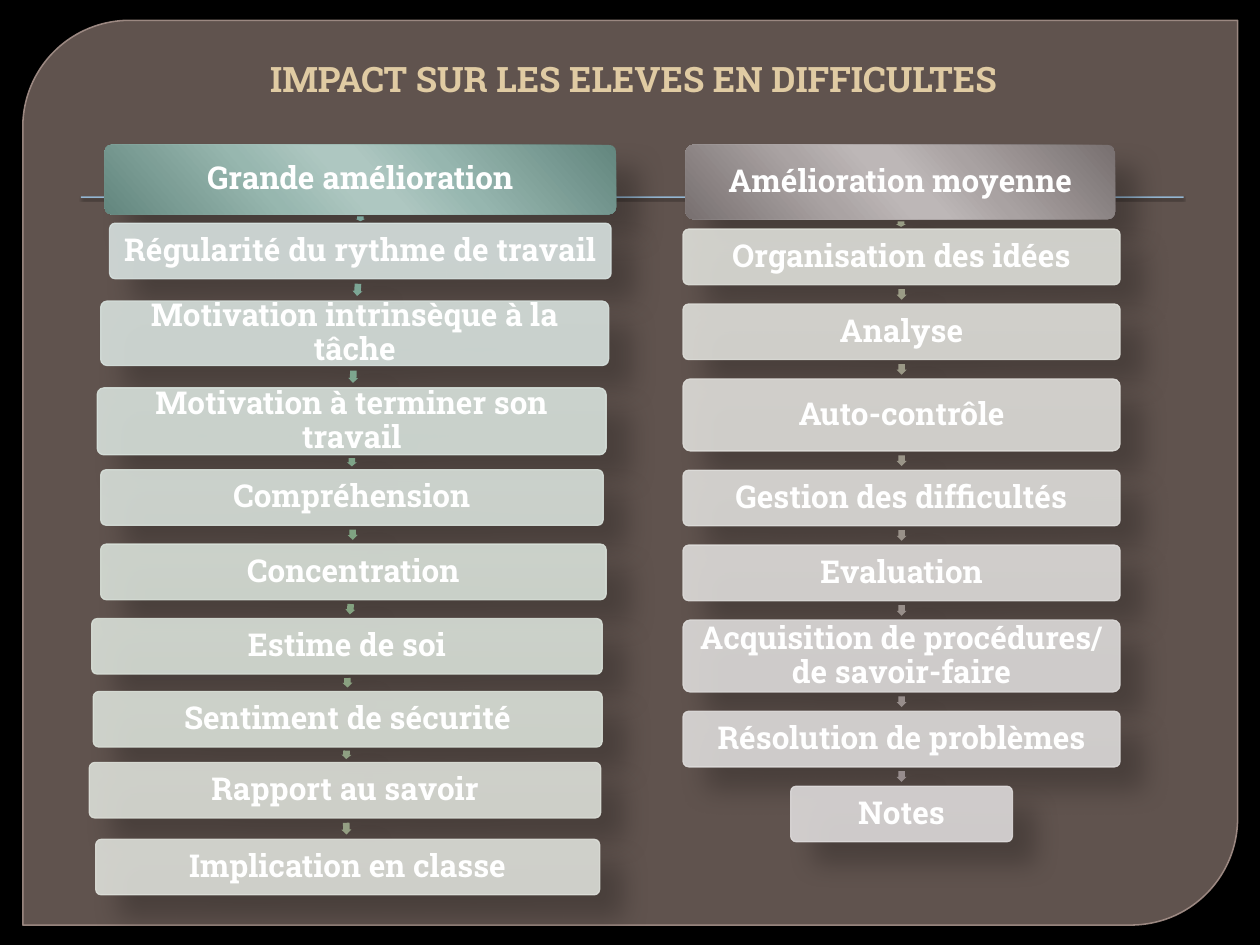
import math
from dataclasses import dataclass

from lxml import etree
from pptx import Presentation
from pptx import util as u
from pptx.dml.color import RGBColor
from pptx.enum import shapes, text
from pptx.oxml import ns

Cm = u.Cm


@dataclass(frozen=True)
class Theme:
    font: str = "Roboto Slab"
    title_size: int = 20
    label_size: int = 18
    background: str = "000000"
    panel: str = "948079"
    panel_line: str = "A9948D"
    rule: str = "94B6D2"
    title: str = "E0CBA3"
    label: str = "FFFFFF"
    shadow: str = "000000"
    green_header: tuple = ("63867E", "96B6AF", "AEC7C1", "AEC7C1", "97B7AF", "63867E")
    grey_header: tuple = ("787070", "A9A2A2", "BDB7B7", "BDB7B7", "AAA3A3", "787070")
    header_stops: tuple = (0, 33, 47, 53, 68, 100)
    green_boxes: tuple = ("D7E1DF", "D7E1DD", "D7E1DB", "D8E0DA", "D8E0D8",
                          "D9E0D8", "DAE0D8", "DCDFD8", "DDDFD9")
    grey_boxes: tuple = ("DEDFD9", "DEDED9", "DEDDD9", "DEDDDA", "DEDCDA",
                         "DDDBDA", "DDDBDA", "DDDADA")
    green_arrows: tuple = ("7BA79D", "7CA695", "7DA58E", "7EA488", "7FA382",
                           "83A280", "8AA181", "8FA082", "949F83")
    grey_arrows: tuple = ("989D85", "9B9C86", "9B9987", "9A9588", "999189",
                          "988F8A", "978D8B", "968C8C")


THEME = Theme()


def add_child(parent, tag, **attributes):
    values = {name: str(value) for name, value in attributes.items()}
    return etree.SubElement(parent, ns.qn(tag), values)


def set_fill(fill, color, opacity=100):
    fill.solid()
    fill.fore_color.rgb = RGBColor.from_string(color)
    if opacity < 100:
        element = fill.fore_color._xFill.find(ns.qn("a:srgbClr"))
        add_child(element, "a:alpha", val=opacity * 1000)


def set_line(shape, color, width, opacity):
    shape.line.width = u.Pt(width)
    set_fill(shape.line.fill, color, opacity)


def set_gradient(shape, colors):
    shape.fill.background()
    properties = shape.element.spPr
    gradient = etree.Element(ns.qn("a:gradFill"), rotWithShape="1")
    stops = add_child(gradient, "a:gsLst")
    for position, color in zip(THEME.header_stops, colors):
        stop = add_child(stops, "a:gs", pos=position * 1000)
        add_child(stop, "a:srgbClr", val=color)
    add_child(gradient, "a:lin", ang=139 * 60000, scaled=0)
    properties.replace(properties.find(ns.qn("a:noFill")), gradient)


def set_shadow(shape, opacity=26, blur=15, distance=18, angle=45):
    effects = shape.element.spPr.find(ns.qn("a:effectLst"))
    shadow = add_child(effects, "a:outerShdw", blurRad=u.Pt(blur), dist=u.Pt(distance),
                       dir=angle * 60000, algn="tl", rotWithShape=0)
    color = add_child(shadow, "a:srgbClr", val=THEME.shadow)
    add_child(color, "a:alpha", val=opacity * 1000)


def add_plain_shape(container, kind, box, *adjustments):
    shape = container.add_shape(kind, *(Cm(length) for length in box))
    shape.shadow.inherit = False
    shape.line.fill.background()
    for index, value in enumerate(adjustments):
        shape.adjustments[index] = value
    return shape


def format_runs(paragraph, size, color):
    paragraph.alignment = text.PP_ALIGN.CENTER
    for run in paragraph.runs:
        run.font.name = THEME.font
        run.font.size = u.Pt(size)
        run.font.bold = True
        run.font.color.rgb = RGBColor.from_string(color)


def add_label_box(container, box, label):
    shape = add_plain_shape(container, shapes.MSO_SHAPE.ROUNDED_RECTANGLE, box, 0.1)
    frame = shape.text_frame
    frame.text = label
    frame.word_wrap = True
    frame.vertical_anchor = text.MSO_ANCHOR.MIDDLE
    frame.margin_left = frame.margin_right = Cm(0.08)
    frame.margin_top = frame.margin_bottom = Cm(0.08)
    paragraph = frame.paragraphs[0]
    paragraph.line_spacing = 0.9
    format_runs(paragraph, THEME.label_size, THEME.label)
    return shape


def add_arrow(container, upper, lower, color):
    upper_x, lower_x = upper[0] + upper[2] / 2, lower[0] + lower[2] / 2
    bottom = upper[1] + upper[3]
    length, thickness = 0.55 * (lower[1] - bottom), 0.2
    center_x, center_y = (upper_x + lower_x) / 2, (bottom + lower[1]) / 2
    rise = lower[1] + lower[3] / 2 - upper[1] - upper[3] / 2
    box = (center_x - length / 2, center_y - thickness / 2, length, thickness)
    arrow = add_plain_shape(container, shapes.MSO_SHAPE.RIGHT_ARROW, box, 0.667, 0.5)
    arrow.rotation = math.degrees(math.atan2(rise, lower_x - upper_x))
    set_fill(arrow.fill, color)
    set_shadow(arrow)


def add_column(slide, origin, items, header_colors, box_colors, arrow_colors):
    container = slide.shapes.add_group_shape().shapes
    left, top = origin
    boxes = [(left + x, top + y, width, height) for _, x, y, width, height in items]
    header = add_label_box(container, boxes[0], items[0][0])
    set_gradient(header, header_colors)
    set_shadow(header)
    for index, (box_color, arrow_color) in enumerate(zip(box_colors, arrow_colors), 1):
        add_arrow(container, boxes[index - 1], boxes[index], arrow_color)
        shape = add_label_box(container, boxes[index], items[index][0])
        set_fill(shape.fill, box_color, 90)
        set_line(shape, box_color, 0.75, 90)
        set_shadow(shape)


def add_backdrop(slide, box):
    left, top, width, _ = box
    set_fill(slide.background.fill, THEME.background)
    panel = add_plain_shape(slide.shapes, shapes.MSO_SHAPE.ROUND_2_DIAG_RECTANGLE,
                            box, 0.118, 0)
    set_fill(panel.fill, THEME.panel, 65)
    set_line(panel, THEME.panel_line, 0.87, 88)
    rule = add_plain_shape(slide.shapes, shapes.MSO_SHAPE.RECTANGLE,
                           (left + 1.17, top + 3.55, width - 2.26, 0.03))
    set_fill(rule.fill, THEME.rule)
    set_shadow(rule, opacity=75, blur=1, distance=1, angle=90)
    for shape in (panel, rule):
        slide.shapes.title.element.addprevious(shape.element)


def add_title(slide, box, label):
    title = slide.shapes.title
    title.left, title.top, title.width, title.height = (Cm(length) for length in box)
    frame = title.text_frame
    frame.text = label
    frame.word_wrap = True
    frame.vertical_anchor = text.MSO_ANCHOR.BOTTOM
    frame.paragraphs[0]._p.get_or_add_pPr().set("marL", str(Cm(0.15)))
    format_runs(frame.paragraphs[0], THEME.title_size, THEME.title)


def stack_moderate_items():
    items = [("Amélioration moyenne", 0.05, 0, 8.66, 1.5)]
    labels = ("Organisation des idées", "Analyse", "Auto-contrôle",
              "Gestion des difficultés", "Evaluation",
              "Acquisition de procédures/ de savoir-faire",
              "Résolution de problèmes", "Notes")
    column_width, gap, top = 8.81, 0.39, 1.7
    for label in labels:
        width = 4.47 if label == "Notes" else column_width
        height = 1.45 if label.startswith(("Auto", "Acquisition")) else 1.12
        items.append((label, (column_width - width) / 2, top, width, height))
        top += height + gap
    return items


STRONG_ITEMS = (
    ("Grande amélioration", 0.31, 0, 10.31, 1.4),
    ("Régularité du rythme de travail", 0.41, 1.58, 10.11, 1.12),
    ("Motivation intrinsèque à la tâche", 0.23, 3.15, 10.24, 1.3),
    ("Motivation à terminer son travail", 0.16, 4.9, 10.26, 1.35),
    ("Compréhension", 0.23, 6.55, 10.13, 1.12),
    ("Concentration", 0.23, 8.05, 10.19, 1.12),
    ("Estime de soi", 0.05, 9.55, 10.29, 1.12),
    ("Sentiment de sécurité", 0.08, 11.02, 10.26, 1.12),
    ("Rapport au savoir", 0, 12.45, 10.31, 1.12),
    ("Implication en classe", 0.13, 14, 10.16, 1.12),
)


def main():
    presentation = Presentation()
    presentation.slide_width, presentation.slide_height = Cm(25.4), Cm(19.05)
    slide = presentation.slides.add_slide(presentation.slide_layouts[5])
    add_backdrop(slide, (0.46, 0.41, 24.49, 18.24))
    add_title(slide, (1.27, 0.71, 22.86, 1.42), "IMPACT SUR LES ELEVES EN DIFFICULTES")
    add_column(slide, (1.8, 2.92), STRONG_ITEMS,
               THEME.green_header, THEME.green_boxes, THEME.green_arrows)
    add_column(slide, (13.77, 2.92), stack_moderate_items(),
               THEME.grey_header, THEME.grey_boxes, THEME.grey_arrows)
    presentation.save("out.pptx")


if __name__ == "__main__":
    main()
